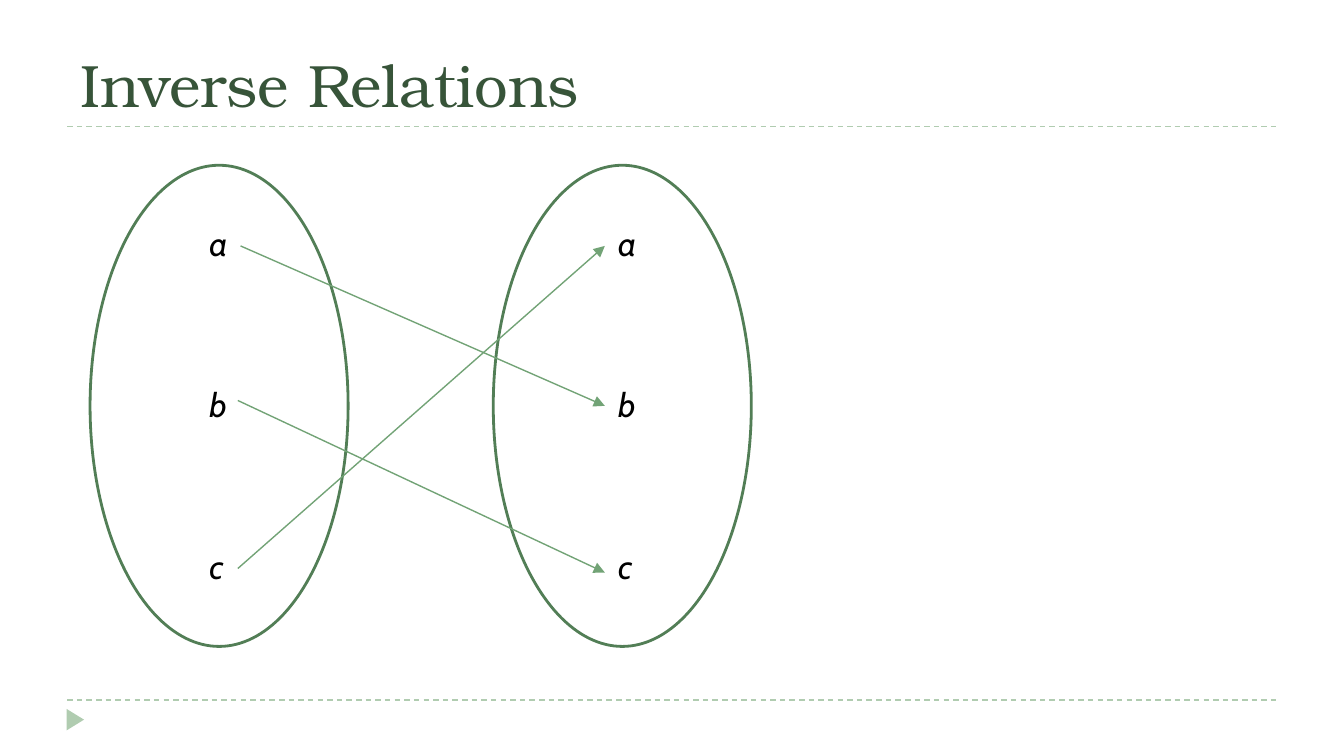
from dataclasses import dataclass

from lxml import etree
from pptx import Presentation
from pptx.dml.color import RGBColor
from pptx.enum.dml import MSO_LINE
from pptx.enum.shapes import MSO_CONNECTOR, MSO_SHAPE
from pptx.enum.text import MSO_ANCHOR, PP_ALIGN
from pptx.oxml.ns import qn
from pptx.slide import Slide
from pptx.util import Inches, Pt

ELLIPSE = MSO_SHAPE.OVAL
TRIANGLE = MSO_SHAPE.ISOSCELES_TRIANGLE
STRAIGHT = MSO_CONNECTOR.STRAIGHT
DASH = MSO_LINE.DASH
BOTTOM, TOP = MSO_ANCHOR.BOTTOM, MSO_ANCHOR.TOP
LEFT = PP_ALIGN.LEFT

PALE, MEDIUM, DEEP, DARK = "B0CCB0", "72A376", "527E56", "375439"
WHITE, BLACK = "FFFFFF", "000000"
ELEMENTS = ("a", "b", "c")


@dataclass(frozen=True)
class RelationSet:
    ellipse_left: float
    labels_left: float


@dataclass(frozen=True)
class Segment:
    x1: float
    y1: float
    x2: float
    y2: float


SETS = (RelationSet(0.67, 1.46), RelationSet(3.67, 4.5))
RULES = tuple(Segment(0.5, y, 9.5, y) for y in (5.21, 0.94))
MAPPINGS = (
    Segment(1.79, 1.83, 4.5, 3.02),
    Segment(1.77, 2.98, 4.5, 4.26),
    Segment(1.77, 4.23, 4.5, 1.83),
)


def color(value: str) -> RGBColor:
    return RGBColor.from_string(value)


def draw_line(slide: Slide, segment: Segment, stroke: str,
              dashed: bool = False, arrow: bool = False) -> None:
    connector = slide.shapes.add_connector(
        STRAIGHT, Inches(segment.x1), Inches(segment.y1),
        Inches(segment.x2), Inches(segment.y2))
    connector.line.color.rgb = color(stroke)
    connector.line.width = Pt(0.75)
    if dashed:
        connector.line.dash_style = DASH
    properties = connector._element.spPr
    if arrow:
        outline = properties.find(qn("a:ln"))
        etree.SubElement(outline, qn("a:tailEnd"), type="triangle")
    etree.SubElement(properties, qn("a:effectLst"))


def draw_marker(slide: Slide) -> None:
    marker = slide.shapes.add_shape(
        TRIANGLE, Inches(0.48), Inches(5.29), Inches(0.16), Inches(0.13))
    marker.rotation = 90
    marker.fill.solid()
    marker.fill.fore_color.rgb = color(PALE)
    marker.line.fill.background()
    marker.shadow.inherit = False


def draw_title(slide: Slide) -> None:
    title = slide.shapes.title
    title.left, title.top = Inches(0.5), Inches(0.12)
    title.width, title.height = Inches(9), Inches(0.82)
    frame = title.text_frame
    frame.text = "Inverse Relations"
    frame.vertical_anchor = BOTTOM
    heading = frame.paragraphs[0]
    heading.alignment = LEFT
    heading.font.name = "TeX Gyre Bonum"
    heading.font.size = Pt(32)
    heading.font.color.rgb = color(DARK)


def draw_set(slide: Slide, relation_set: RelationSet) -> None:
    ellipse = slide.shapes.add_shape(
        ELLIPSE, Inches(relation_set.ellipse_left), Inches(1.23),
        Inches(1.92), Inches(3.58))
    ellipse.fill.solid()
    ellipse.fill.fore_color.rgb = color(WHITE)
    ellipse.line.color.rgb = color(DEEP)
    ellipse.line.width = Pt(1.5)
    ellipse.shadow.inherit = False

    labels = slide.shapes.add_textbox(
        Inches(relation_set.labels_left), Inches(1.61),
        Inches(0.32), Inches(2.83))
    frame = labels.text_frame
    frame.word_wrap = False
    frame.vertical_anchor = TOP
    for index, element in enumerate(ELEMENTS):
        label = frame.paragraphs[0] if index == 0 else frame.add_paragraph()
        label.text = element
        label.alignment = LEFT
        label.space_before = Pt(64.8 if index else 0)
        label.font.name = "Cabin"
        label.font.size = Pt(18)
        label.font.italic = True
        label.font.color.rgb = color(BLACK)


def main() -> None:
    deck = Presentation()
    deck.slide_width = Inches(10)
    deck.slide_height = deck.slide_width * 9 // 16
    slide = deck.slides.add_slide(deck.slide_layouts[5])
    for rule in RULES:
        draw_line(slide, rule, PALE, dashed=True)
    draw_marker(slide)
    draw_title(slide)
    for relation_set in SETS:
        draw_set(slide, relation_set)
    for mapping in MAPPINGS:
        draw_line(slide, mapping, MEDIUM, arrow=True)
    deck.save("out.pptx")


if __name__ == "__main__":
    main()
